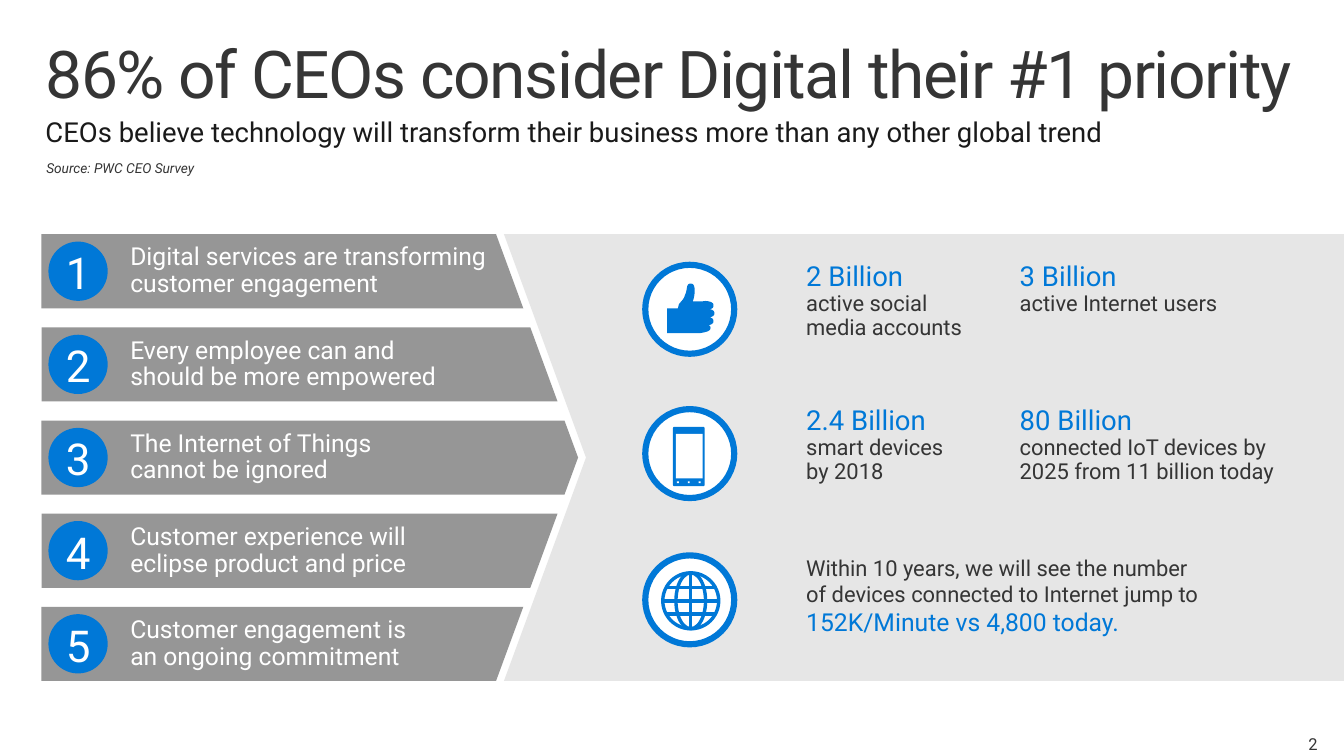
from copy import deepcopy
from dataclasses import dataclass
from math import sqrt

from lxml.etree import SubElement
from pptx import Presentation
from pptx.dml.color import RGBColor
from pptx.enum.shapes import MSO_CONNECTOR, MSO_SHAPE
from pptx.enum.text import MSO_ANCHOR, MSO_AUTO_SIZE, PP_ALIGN
from pptx.oxml.ns import qn
from pptx.util import Emu, Inches, Pt

COLS, ROWS = 136, 76.5  # grid of cells, each a tenth of an inch


@dataclass(frozen=True)
class Theme:
    font: str = "Roboto"
    blue: str = "0078D7"
    dark: str = "353535"
    ink: str = "1A1A1A"
    gray: str = "737373"
    pale: str = "E6E6E6"
    white: str = "FFFFFF"
    title: int = 48
    digit: int = 32
    lead: int = 20
    label: int = 18
    body: int = 16
    page: int = 12
    note: int = 10


THEME = Theme()
BARS = [
    "Digital services are transforming\ncustomer engagement",
    "Every employee can and\nshould be more empowered",
    "The Internet of Things\ncannot be ignored",
    "Customer experience will\neclipse product and price",
    "Customer engagement is\nan ongoing commitment",
]
# Outline of the thumb: a point is a corner, six numbers are a curve
THUMB = [
    (4.6, 1.9), (5.2, 1.8, 5, 3.3, 4.8, 3.7), (5.8, 3.7),
    (6.1, 3.6, 6.8, 3.7, 6.9, 4), (6.9, 4.3, 6.9, 4.4, 6.5, 4.5),
    (6.8, 4.5, 7, 4.7, 7, 4.9), (7, 5.1, 6.8, 5.3, 6.5, 5.3),
    (6.8, 5.4, 6.9, 5.5, 6.9, 5.7), (6.9, 5.9, 6.7, 6.1, 6.3, 6.1),
    (6.5, 6.1, 6.6, 6.2, 6.6, 6.4), (6.6, 6.7, 6.2, 6.8, 5.6, 6.9),
    (2.2, 6.9), (2.2, 4.4), (3.3, 4.4), (3.4, 4),
    (3.6, 3.7, 3.9, 3.5, 4, 3.1), (4.3, 2.5, 4.1, 2, 4.5, 1.9),
]


def cell(count):
    return Emu(round(count * Inches(0.1)))


def tint(hue):
    return RGBColor.from_string(hue)


# Text
def write(shape, parts, space=0.9, pad=(1, 0.5, 1, 0.5), spc=0, italic=None,
          align=PP_ALIGN.LEFT, anchor=MSO_ANCHOR.TOP, wrap=True):
    frame = shape.text_frame
    sides = ("margin_left", "margin_top", "margin_right", "margin_bottom")
    form = dict(zip(sides, map(cell, pad)), word_wrap=wrap,
                auto_size=MSO_AUTO_SIZE.NONE, vertical_anchor=anchor)
    for key, value in form.items():
        setattr(frame, key, value)
    para = frame.paragraphs[0]
    para.alignment, para.line_spacing = align, space
    for words, size, hue in parts:
        for index, line in enumerate(words.split("\n")):
            if index:
                para.add_line_break()
                para._p[-1].append(deepcopy(run._r.rPr))
            run = para.add_run()
            run.text = line
            for key, value in dict(name=THEME.font, size=Pt(size), italic=italic).items():
                setattr(run.font, key, value)
            run.font.color.rgb = tint(hue)
            if spc:
                run._r.rPr.set("spc", str(spc))


def note(slide, box, parts, **form):
    write(slide.shapes.add_textbox(*map(cell, box)), parts, **form)


# Shapes
def paint(shape, fill=None, line=None, width=0):
    shape.shadow.inherit = False
    if fill:
        shape.fill.solid()
        shape.fill.fore_color.rgb = tint(fill)
    else:
        shape.fill.background()
    if line:
        shape.line.color.rgb = tint(line)
        shape.line.width = Pt(width)
    else:
        shape.line.fill.background()
    return shape


def form(slide, kind, box, *look):
    return paint(slide.shapes.add_shape(kind, *map(cell, box)), *look)


def trace(slide, points, fill):
    spots = [(cell(x), cell(y)) for x, y in points]
    pen = slide.shapes.build_freeform(*spots[0])
    pen.add_line_segments(spots[1:], close=True)
    return paint(pen.convert_to_shape(), fill)


def rule(slide, *ends):
    line = slide.shapes.add_connector(MSO_CONNECTOR.STRAIGHT, *map(cell, ends))
    line.line.color.rgb = tint(THEME.blue)
    line.line.width = Pt(2.5)
    SubElement(line._element.spPr, qn("a:effectLst"))


# Icons, placed from the top left of their ring
def thumb(slide, x, y):
    points = [THUMB[0]]
    for step in THUMB[1:]:
        if len(step) == 2:
            points.append(step)
            continue
        knots = [points[-1], step[:2], step[2:4], step[4:]]
        for t in (k / 8 for k in range(1, 9)):
            shares = ((1 - t) ** 3, 3 * t * (1 - t) ** 2, 3 * t * t * (1 - t), t ** 3)
            points.append(tuple(sum(s * p[axis] for s, p in zip(shares, knots))
                                for axis in (0, 1)))
    trace(slide, [(x + a, y + b) for a, b in points], THEME.blue)


def phone(slide, x, y):
    case = form(slide, MSO_SHAPE.ROUNDED_RECTANGLE, (x + 2.8, y + 1.8, 3.2, 6), THEME.blue)
    case.adjustments[0] = 0.04
    holes = [(3.1, 2.5, 2.7, 4.5)] + [(3.2 + 1.1 * k, 7.3, 0.2, 0.2) for k in range(3)]
    for left, top, wide, high in holes:
        form(slide, MSO_SHAPE.RECTANGLE, (x + left, y + top, wide, high), THEME.white)


def globe(slide, x, y):
    mid, base, radius = x + 4.6, y + 4.6, 2.83
    for half in (radius, 1.5):
        form(slide, MSO_SHAPE.OVAL, (mid - half, base - radius, 2 * half, 2 * radius),
             None, THEME.blue, 2.5)
    rule(slide, mid, base - radius, mid, base + radius)
    for rise in (-1.33, 0, 1.33):
        half = sqrt(radius ** 2 - rise ** 2)
        rule(slide, mid - half, base + rise, mid + half, base + rise)


# Regions
def head(slide, box):
    x, y, wide, high = box
    title = slide.shapes.title
    for key, value in zip(("left", "top", "width", "height"), box):
        setattr(title, key, cell(value))
    pad = (1.6, 1, 1.6, 1)
    write(title, [("86% of CEOs consider Digital their #1 priority", THEME.title, THEME.dark)],
          pad=pad, spc=-100)
    note(slide, (x, y + high, wide, 5),
         [("CEOs believe technology will transform their business more than any "
           "other global trend", THEME.lead, THEME.ink)], pad=pad)
    note(slide, (x + 0.7, y + 12.5, 17.2, 2.7),
         [("Source: PWC CEO Survey", THEME.note, THEME.dark)],
         space=1, italic=True, wrap=False)


def bars(slide, box):
    x, y, wide, high = box
    tall, slant, mid = 7.5, 8.3, y + high / 2
    pitch = (high - tall) / (len(BARS) - 1)

    def edge(level):
        return x + wide - slant * abs(level - mid) / (high / 2)

    for index, words in enumerate(BARS):
        top = y + index * pitch
        low = top + tall
        levels = [top, mid, low] if top < mid < low else [top, low]
        bar = trace(slide, [(x, top), *((edge(v), v) for v in levels), (x, low)], THEME.gray)
        SubElement(bar._element.spPr.find(".//" + qn("a:srgbClr")), qn("a:alpha"), val="75000")
        disc = form(slide, MSO_SHAPE.OVAL, (x + 0.7, top + 0.75, 6, 6), THEME.blue)
        write(disc, [(str(index + 1), THEME.digit, THEME.white)], space=0.7, spc=-100,
              pad=(0.9, 1.5, 1, 0), align=PP_ALIGN.CENTER, anchor=MSO_ANCHOR.MIDDLE)
        note(slide, (x + 8, top, 39, tall), [(words, THEME.label, THEME.white)],
             anchor=MSO_ANCHOR.MIDDLE)


def panel(slide, box):
    x, y, wide, high = box
    trace(slide, [(x, y), (x + wide, y), (x + wide, y + high), (x, y + high),
                  (x + 8.3, y + high / 2)], THEME.pale)
    left, right = x + 29.6, x + 51.2
    facts = [
        (left, 3.1, "2 Billion", "active social\nmedia accounts"),
        (right, 3.1, "3 Billion", "active Internet users"),
        (left, 17.7, "2.4 Billion", "smart devices\nby 2018"),
        (right, 17.7, "80 Billion", "connected IoT devices by\n2025 from 11 billion today"),
    ]
    for draw, drop in ((thumb, 3.1), (phone, 17.7), (globe, 32.5)):
        spot = (x + 14.3, y + drop)
        form(slide, MSO_SHAPE.OVAL, (*spot, 9, 9), THEME.white, THEME.blue, 4.5)
        draw(slide, *spot)
    for start, drop, count, words in facts:
        note(slide, (start, y + drop - 0.7, 28.5, 8.9),
             [(count + "\n", THEME.lead, THEME.blue), (words, THEME.body, THEME.dark)])
    note(slide, (left, y + 31.9, 48.3, 9.8),
         [("Within 10 years, we will see the number\nof devices connected to Internet "
           "jump to\n", THEME.body, THEME.dark),
          ("152K/Minute vs 4,800 today.", THEME.label, THEME.blue)], space=1)


def main():
    deck = Presentation()
    deck.slide_width, deck.slide_height = cell(COLS), cell(ROWS)
    slide = deck.slides.add_slide(deck.slide_layouts[5])
    panel(slide, (51, 23.7, COLS - 51, 45.2))
    head(slide, (3, 3.2, COLS - 6, 7.8))
    bars(slide, (4.2, 23.7, 54.3, 45.2))
    # Page number
    note(slide, (COLS - 4.6, ROWS - 2.7, 4.1, 2.7), [("2", THEME.page, THEME.dark)], space=1)
    deck.save("out.pptx")


if __name__ == "__main__":
    main()
